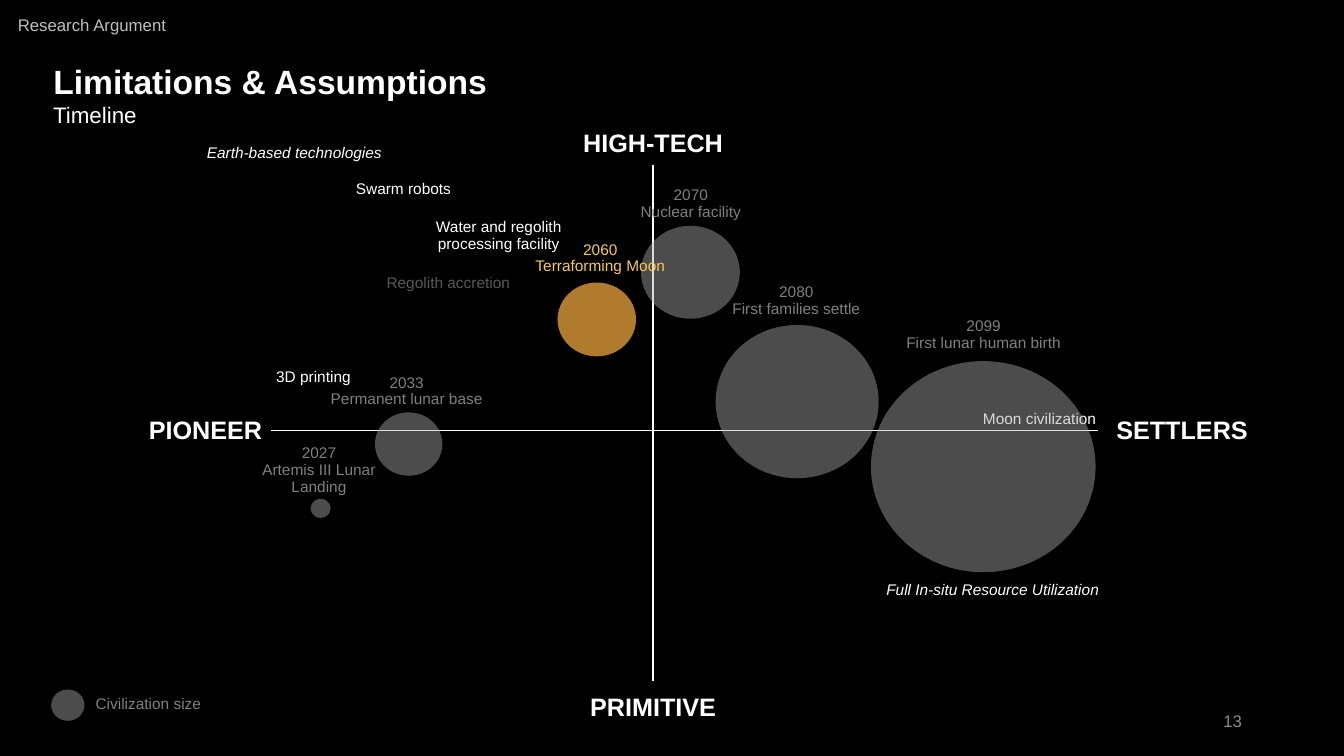
"""Build the lunar civilization timeline slide: four poles, milestones and technologies."""
from dataclasses import dataclass

from lxml.etree import SubElement
from pptx import Presentation
from pptx.dml.color import RGBColor
from pptx.enum.shapes import MSO_CONNECTOR, MSO_SHAPE
from pptx.enum.text import MSO_ANCHOR, MSO_AUTO_SIZE, PP_ALIGN
from pptx.oxml.ns import qn
from pptx.util import Cm, Pt


@dataclass(frozen=True)
class Theme:
    font: str = "Arial"
    black: str = "000000"
    white: str = "FFFFFF"
    header: str = "BFBFBF"
    number: str = "8C8C8C"
    muted: str = "808080"
    dim: str = "595959"
    bubble: str = "AEAEAE"
    orange: str = "FBB040"
    gold: str = "F8CA50"
    title_size: int = 24
    pole_size: int = 18
    subtitle_size: int = 16
    small_size: int = 12
    label_size: int = 11


theme = Theme()
deck = Presentation()
deck.slide_width, deck.slide_height = Cm(33.87), Cm(19.05)
page = deck.slides.add_slide(deck.slide_layouts[5])
page.background.fill.solid()
page.background.fill.fore_color.rgb = RGBColor.from_string(theme.black)


def add_text(text, *, left, top, width, height=0.86, size=theme.label_size,
             color=theme.white, bold=False, italic=False, align=PP_ALIGN.LEFT,
             anchor=MSO_ANCHOR.TOP, spacing=0.9, box=None):
    """Place text, one paragraph per line, in a new box or a given placeholder."""
    box = box or page.shapes.add_textbox(0, 0, 0, 0)
    box.left, box.top, box.width, box.height = Cm(left), Cm(top), Cm(width), Cm(height)
    frame = box.text_frame
    frame.text = text
    frame.word_wrap = True
    frame.auto_size = MSO_AUTO_SIZE.NONE
    frame.vertical_anchor = anchor
    for para in frame.paragraphs:
        para.alignment = align
        para.line_spacing = spacing
        for span in para.runs:
            span.font.name = theme.font
            span.font.size = Pt(size)
            span.font.bold = bold
            span.font.italic = italic
            span.font.color.rgb = RGBColor.from_string(color)


def add_bubble(center_x, center_y, width, color=theme.bubble, opacity=44):
    """Draw a translucent ellipse around its centre."""
    height = width * 0.94
    bubble = page.shapes.add_shape(
        MSO_SHAPE.OVAL, Cm(center_x - width / 2), Cm(center_y - height / 2),
        Cm(width), Cm(height))
    bubble.shadow.inherit = False
    bubble.line.fill.background()
    bubble.fill.solid()
    bubble.fill.fore_color.rgb = RGBColor.from_string(color)
    tint = bubble.fill._xPr.find(".//" + qn("a:srgbClr"))
    SubElement(tint, qn("a:alpha"), val=str(opacity * 1000))


add_text("Limitations & Assumptions", left=1.09, top=1.52, width=31.47, height=1.09,
         size=theme.title_size, bold=True, box=page.shapes.title)
add_text("Research Argument", left=0.2, top=0.25, width=22.05, height=1.09,
         size=theme.small_size, color=theme.header, spacing=1.0)
add_text("Timeline", left=1.09, top=2.49, width=24.89, height=0.69,
         size=theme.subtitle_size)

pole_width = 8.59
for pole, center, top in [
    ("HIGH-TECH", 16.46, 3.18),
    ("PRIMITIVE", 16.46, 17.37),
    ("PIONEER", 5.18, 10.39),
    ("SETTLERS", 29.79, 10.39),
]:
    add_text(pole, left=center - pole_width / 2, top=top, width=pole_width, height=2.72,
             size=theme.pole_size, bold=True, align=PP_ALIGN.CENTER)

for ends in [(6.83, 10.85, 27.66, 10.85), (16.46, 4.17, 16.46, 17.17)]:
    axis = page.shapes.add_connector(MSO_CONNECTOR.STRAIGHT, *map(Cm, ends))
    axis.line.color.rgb = RGBColor.from_string(theme.white)
    axis.line.width = Pt(1)
    SubElement(axis._element.spPr, qn("a:effectLst"))

technologies = [
    ("Moon civilization", 26.2, 10.24, 4.39, theme.white, False),
    ("Earth-based technologies", 7.42, 3.53, 6.15, theme.white, True),
    ("Swarm robots", 10.17, 4.45, 4.39, theme.white, False),
    ("Water and regolith processing facility", 12.57, 5.41, 4.17, theme.white, False),
    ("Regolith accretion", 11.3, 6.81, 4.17, theme.dim, False),
    ("3D printing", 7.9, 9.17, 4.17, theme.white, False),
    ("Full In-situ Resource Utilization", 25.02, 14.55, 6.15, theme.white, True),
]
for name, center, top, width, color, italic in technologies:
    add_text(name, left=center - width / 2, top=top, width=width, color=color,
             italic=italic, align=PP_ALIGN.CENTER)

milestones = [
    ("2027", "Artemis III Lunar Landing", (8.04, 11.1, 4.39), (8.08, 12.81, 0.51)),
    ("2033", "Permanent lunar base", (10.25, 9.32, 4.39), (10.3, 11.19, 1.7)),
    ("2070", "Nuclear facility", (17.41, 4.6, 4.39), (17.4, 6.86, 2.49)),
    ("2080", "First families settle", (20.07, 7.04, 4.67), (20.09, 10.12, 4.11)),
    ("2099", "First lunar human birth", (24.79, 7.9, 4.67), (24.78, 11.76, 5.66)),
    ("2060", "Terraforming Moon", (15.13, 5.97, 4.39), (15.04, 8.05, 1.98)),
]
highlight = "2060"
for year, event, label, bubble in milestones:
    if year == highlight:
        add_bubble(*bubble, color=theme.orange, opacity=70)
    else:
        add_bubble(*bubble)
for year, event, (center, top, width), bubble in milestones:
    add_text(f"{year}\n{event}", left=center - width / 2, top=top, width=width,
             color=theme.gold if year == highlight else theme.muted,
             align=PP_ALIGN.CENTER)

add_bubble(1.71, 17.77, 0.84)
add_text("Civilization size", left=2.16, top=17.42, width=4.39, color=theme.muted)
add_text("13", left=23.93, top=17.65, width=7.62, height=1.02, size=theme.small_size,
         color=theme.number, align=PP_ALIGN.RIGHT, anchor=MSO_ANCHOR.MIDDLE, spacing=1.0)

deck.save("out.pptx")
